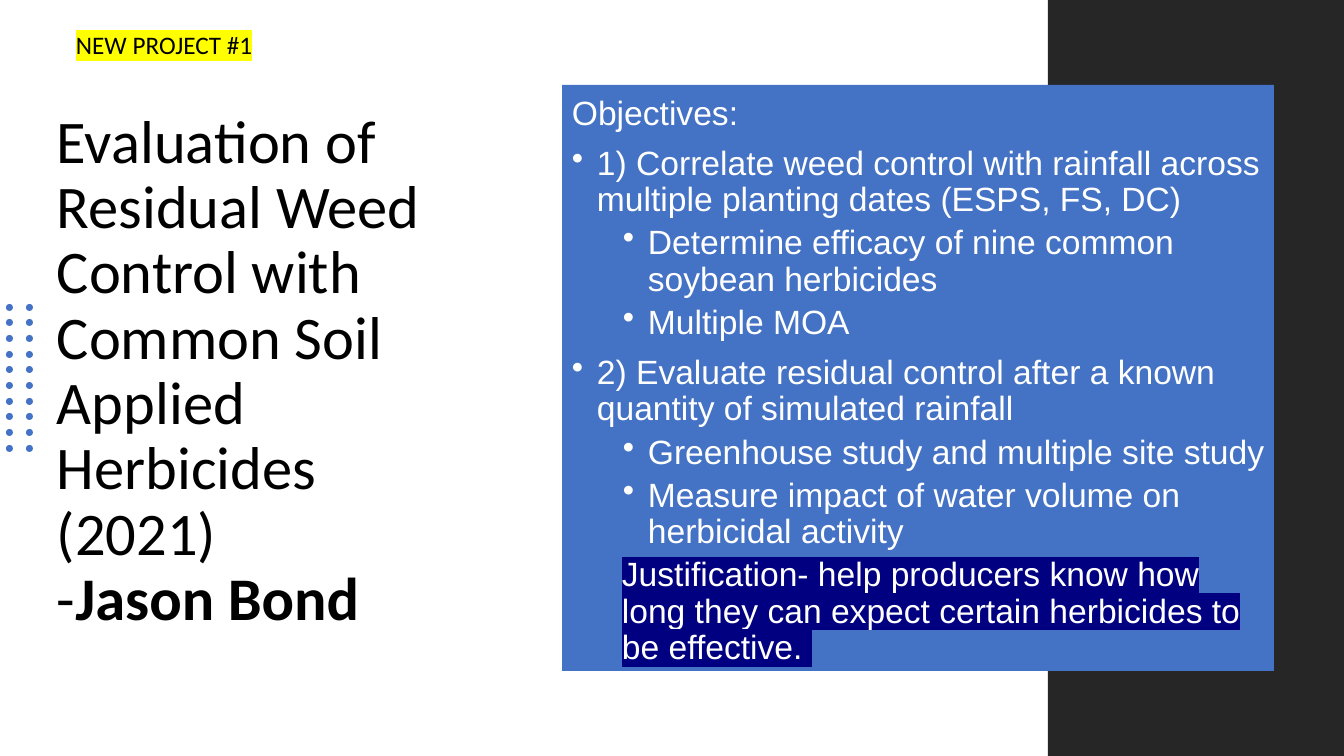
from dataclasses import dataclass

from lxml import etree
from pptx import Presentation
from pptx import util as u
from pptx.dml.color import RGBColor
from pptx.enum import shapes, text
from pptx.oxml.ns import qn

PX = 12700 * 72 / 100.8


@dataclass(frozen=True)
class Theme:
    ink: str = "000000"
    paper: str = "FFFFFF"
    blue: str = "4472C4"
    dark: str = "262626"
    navy: str = "000080"
    yellow: str = "FFFF00"
    heading_font: str = "Calibri"
    body_font: str = "Arial"
    title_size: float = 43.2
    body_size: int = 24
    tag_size: int = 18
    line_spacing: float = 0.9


THEME = Theme()

# Indent of the text and of its first line in px, and space before in points
PLAIN, POINT, DETAIL, NOTE = (0, 0, 10), (25, -25, 10), (76, -25, 5), (50, 0, 5)

OBJECTIVES = [
    (PLAIN, "Objectives:"),
    (POINT, "1) Correlate weed control with rainfall across multiple planting dates (ESPS, FS, DC)"),
    (DETAIL, "Determine efficacy of nine common soybean herbicides"),
    (DETAIL, "Multiple MOA"),
    (POINT, "2) Evaluate residual control after a known quantity of simulated rainfall"),
    (DETAIL, "Greenhouse study and multiple site study"),
    (DETAIL, "Measure impact of water volume on herbicidal activity"),
    (NOTE, "Justification- help producers know how long they can expect certain herbicides to be effective. "),
]


def px(length):
    return u.Emu(round(length * PX))


def add_block(parent, kind, left, top, width, height, color):
    block = parent.add_shape(kind, px(left), px(top), px(width), px(height))
    block.shadow.inherit = False
    block.fill.solid()
    block.fill.fore_color.rgb = RGBColor.from_string(color)
    block.line.fill.background()


def add_text_frame(page, left, top, width, height):
    box = page.shapes.add_textbox(px(left), px(top), px(width), px(height))
    frame = box.text_frame
    frame.word_wrap = True
    frame.margin_top = frame.margin_bottom = 0
    frame.vertical_anchor = text.MSO_ANCHOR.TOP
    return frame


def style(para, font, size, color):
    para.font.name = font
    para.font.size = u.Pt(size)
    para.font.color.rgb = RGBColor.from_string(color)


def highlight(span, color):
    properties = span._r.get_or_add_rPr()
    mark = etree.SubElement(properties, qn("a:highlight"))
    etree.SubElement(mark, qn("a:srgbClr")).set("val", color)


def indent(para, left, first):
    """Indents the paragraph; a hanging first line gets a bullet."""
    properties = para._p.get_or_add_pPr()
    properties.set("marL", str(px(left)))
    properties.set("indent", str(px(first)))
    if first < 0:
        etree.SubElement(properties, qn("a:buChar")).set("char", "•")


def add_dots(page, columns=2, rows=10):
    dots = page.shapes.add_group_shape()
    for row in range(rows):
        for column in range(columns):
            add_block(dots.shapes, shapes.MSO_SHAPE.OVAL,
                      6 + 20 * column, 304 + 141 * row // (rows - 1), 7, 7, THEME.blue)


def add_title(page):
    para = add_text_frame(page, 47, 111, 419, 525).paragraphs[0]
    para.line_spacing = THEME.line_spacing
    style(para, THEME.heading_font, THEME.title_size, THEME.ink)
    para.add_run().text = (
        "Evaluation of Residual Weed Control with Common Soil Applied")
    para.add_line_break()
    para.add_run().text = "Herbicides (2021)"
    para.add_line_break()
    para.add_run().text = "-"
    author = para.add_run()
    author.text = "Jason Bond"
    author.font.bold = True


def add_objectives(page):
    frame = add_text_frame(page, 562, 96, 717, 572)
    for number, (layout, words) in enumerate(OBJECTIVES):
        para = frame.add_paragraph() if number else frame.paragraphs[0]
        left, first, space = layout
        indent(para, left, first)
        para.line_spacing = THEME.line_spacing
        if number:
            para.space_before = u.Pt(space)
        style(para, THEME.body_font, THEME.body_size, THEME.paper)
        span = para.add_run()
        span.text = words
        if layout == NOTE:
            highlight(span, THEME.navy)


def add_tag(page):
    para = add_text_frame(page, 66, 29, 363, 31).paragraphs[0]
    style(para, THEME.heading_font, THEME.tag_size, THEME.ink)
    span = para.add_run()
    span.text = "NEW PROJECT #1"
    highlight(span, THEME.yellow)


def main():
    deck = Presentation()
    deck.slide_width, deck.slide_height = px(1344), px(756)
    page = deck.slides.add_slide(deck.slide_layouts[6])
    add_title(page)
    add_dots(page)
    rectangle = shapes.MSO_SHAPE.RECTANGLE
    add_block(page.shapes, rectangle, 1048, 0, 296, 756, THEME.dark)
    add_block(page.shapes, rectangle, 562, 85, 712, 586, THEME.blue)
    add_objectives(page)
    add_tag(page)
    deck.save("out.pptx")


if __name__ == "__main__":
    main()
